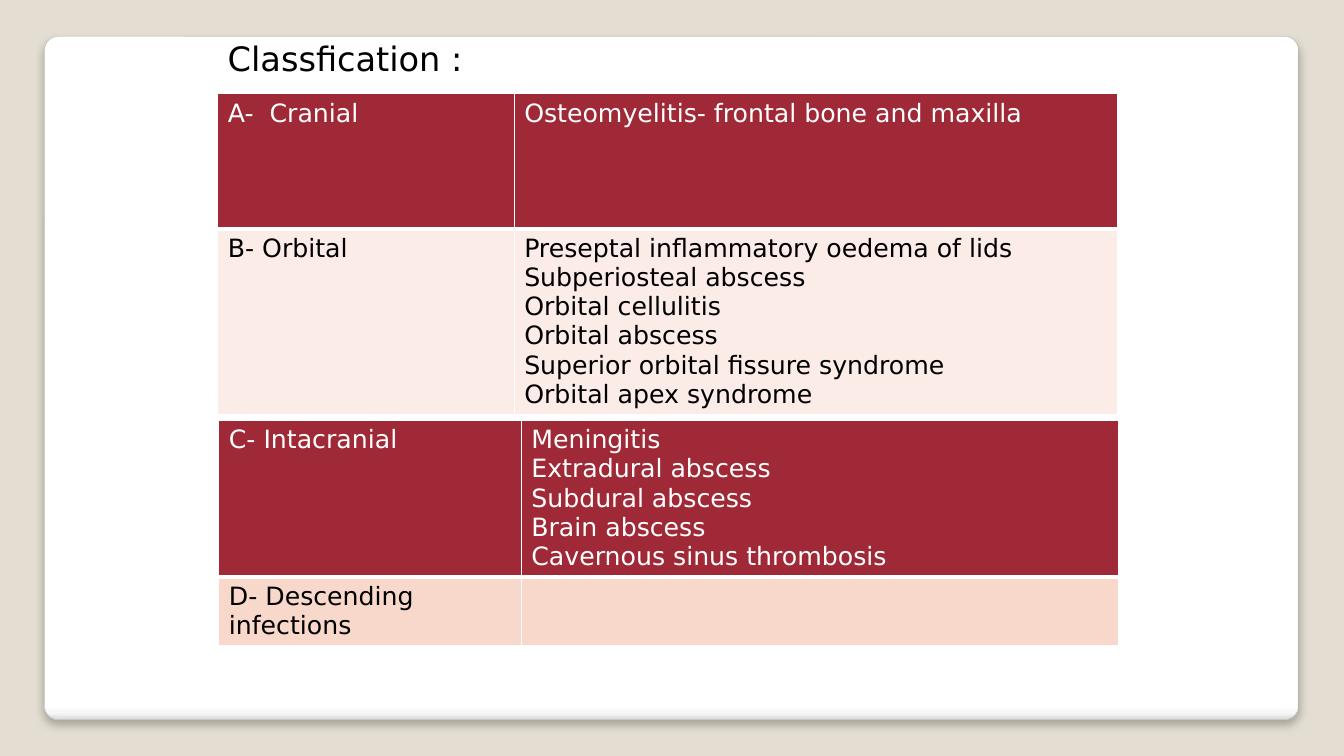
from lxml.etree import SubElement
from pptx import Presentation
from pptx.dml.color import RGBColor
from pptx.enum.shapes import MSO_SHAPE
from pptx.enum.text import MSO_AUTO_SIZE
from pptx.oxml import parse_xml
from pptx.oxml.ns import nsdecls, qn
from pptx.util import Inches, Pt

FONT = "DejaVu Sans"
WHITE, BLACK, RED = "FFFFFF", "000000", "9F2936"
PANEL_STOPS = [(0, WHITE), (98, WHITE), (99, "F7F7F7"), (100, "DADADA")]
UPPER_ROWS = [
    ("A-  Cranial", "Osteomyelitis- frontal bone and maxilla"),
    ("B- Orbital", "Preseptal inflammatory oedema of lids\nSubperiosteal abscess\n"
     "Orbital cellulitis\nOrbital abscess\nSuperior orbital fissure syndrome\n"
     "Orbital apex syndrome"),
]
LOWER_ROWS = [
    ("C- Intacranial", "Meningitis\nExtradural abscess\nSubdural abscess\n"
     "Brain abscess\nCavernous sinus thrombosis"),
    ("D- Descending infections", ""),
]


def color(code):
    """Turn a hex string into a colour."""
    return RGBColor.from_string(code)


def write(frame, text, size=18, ink=BLACK):
    """Write one paragraph per line of text."""
    for index, line in enumerate(text.split("\n")):
        para = frame.add_paragraph() if index else frame.paragraphs[0]
        para.font.size = Pt(size)
        if line:
            span = para.add_run()
            span.text = line
            span.font.name = FONT
            span.font.size = Pt(size)
            span.font.color.rgb = color(ink)


def set_borders(cell, bottom):
    """Draw white cell borders, with the given bottom width in points."""
    properties = cell._tc.get_or_add_tcPr()
    widths = {"lnL": 1, "lnR": 1, "lnT": 1, "lnB": bottom}
    for tag, width in widths.items():
        line = SubElement(properties, qn(f"a:{tag}"), w=str(Pt(width)))
        fill = SubElement(line, qn("a:solidFill"))
        SubElement(fill, qn("a:srgbClr"), val=WHITE)


def add_panel(page, left, top, width, height):
    """Add the rounded white panel with its shaded foot and soft shadow."""
    panel = page.shapes.add_shape(MSO_SHAPE.ROUNDED_RECTANGLE, Inches(left),
                                  Inches(top), Inches(width), Inches(height))
    panel.adjustments[0] = 0.021
    panel.line.color.rgb = color("A4A4A4")
    panel.line.width = Pt(0.16)
    panel.shadow.inherit = False
    panel.fill.gradient()
    panel.fill.gradient_angle = 270
    stops = panel._element.spPr.find(qn("a:gradFill")).find(qn("a:gsLst"))
    for stop in list(stops):
        stops.remove(stop)
    for position, code in PANEL_STOPS:
        stop = SubElement(stops, qn("a:gs"), pos=str(position * 1000))
        SubElement(stop, qn("a:srgbClr"), val=code)
    panel._element.spPr.find(qn("a:effectLst")).append(parse_xml(
        f'<a:outerShdw {nsdecls("a")} blurRad="{Pt(6)}" dist="{Pt(4)}" dir="5400000" '
        f'algn="t" rotWithShape="0"><a:srgbClr val="{BLACK}"><a:alpha val="25000"/>'
        '</a:srgbClr></a:outerShdw>'))


def add_heading(page, left, top, width, height, text):
    """Add the heading above the tables."""
    box = page.shapes.add_textbox(Inches(left), Inches(top), Inches(width), Inches(height))
    box.text_frame.word_wrap = False
    box.text_frame.auto_size = MSO_AUTO_SIZE.SHAPE_TO_FIT_TEXT
    write(box.text_frame, text, size=24)


def add_class_table(page, left, top, columns, heights, rows, tint):
    """Add a table with a red first row and a tinted second row."""
    table = page.shapes.add_table(len(rows), len(columns), Inches(left), Inches(top),
                                  Inches(sum(columns)), Inches(sum(heights))).table
    for column, width in zip(table.columns, columns):
        column.width = Inches(width)
    for index, (row, height, texts) in enumerate(zip(table.rows, heights, rows)):
        row.height = Inches(height)
        fill, ink, bottom = (tint, BLACK, 1) if index else (RED, WHITE, 3)
        for cell, text in zip(row.cells, texts):
            set_borders(cell, bottom)
            cell.fill.solid()
            cell.fill.fore_color.rgb = color(fill)
            write(cell.text_frame, text, ink=ink)


def main():
    """Build the classification slide."""
    deck = Presentation()
    deck.slide_width, deck.slide_height = Inches(13.33), Inches(7.5)
    page = deck.slides.add_slide(deck.slide_layouts[6])
    page.background.fill.solid()
    page.background.fill.fore_color.rgb = color("E3DED1")
    add_panel(page, 0.44, 0.36, 12.44, 6.78)
    add_class_table(page, 2.16, 0.93, [2.94, 5.99], [1.34, 1.83], UPPER_ROWS, "FCECE7")
    add_class_table(page, 2.17, 4.17, [3, 5.92], [1.54, 0.68], LOWER_ROWS, "F9D8CC")
    add_heading(page, 2.16, 0.33, 2.59, 0.5, "Classfication :")
    deck.save("out.pptx")


if __name__ == "__main__":
    main()
